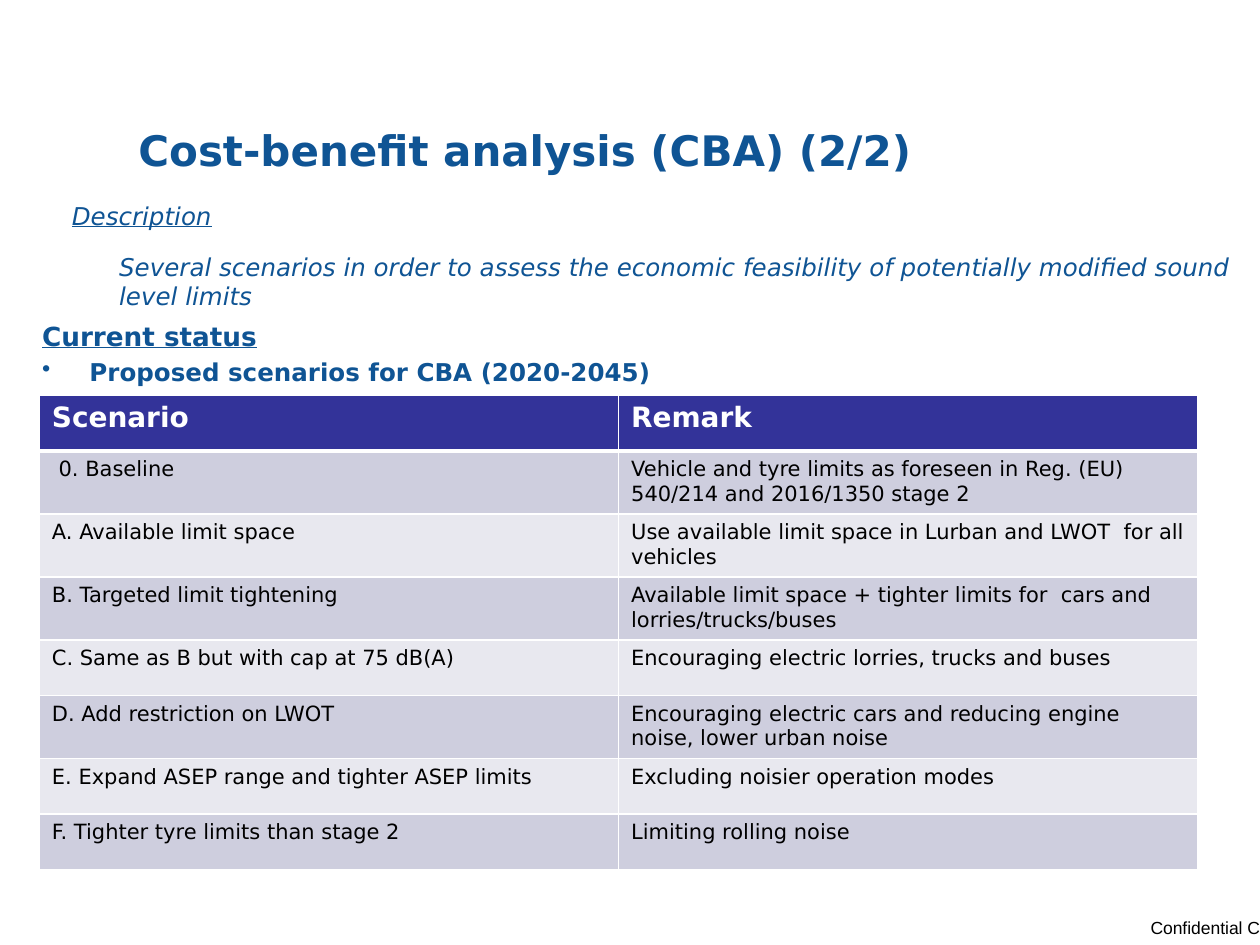
from lxml import etree
from pptx import Presentation
from pptx.dml.color import RGBColor
from pptx.enum.text import MSO_ANCHOR, MSO_AUTO_SIZE, PP_ALIGN
from pptx.oxml.ns import qn
from pptx.util import Pt

MIDDLE = MSO_ANCHOR.MIDDLE
FIT_SHAPE = MSO_AUTO_SIZE.SHAPE_TO_FIT_TEXT
RIGHT = PP_ALIGN.RIGHT

COLORS = {
    "blue": "0F5494",
    "header": "333399",
    "odd": "CECEDE",
    "even": "E8E8EF",
    "white": "FFFFFF",
    "black": "000000",
}
FONT = "DejaVu Sans"
INDENT = 27
SCENARIOS = [
    ("Scenario", "Remark"),
    (" 0. Baseline", "Vehicle and tyre limits as foreseen in Reg. (EU) 540/214 and 2016/1350 stage 2"),
    ("A. Available limit space", "Use available limit space in Lurban and LWOT  for all vehicles"),
    ("B. Targeted limit tightening", "Available limit space + tighter limits for  cars and lorries/trucks/buses"),
    ("C. Same as B but with cap at 75 dB(A)", "Encouraging electric lorries, trucks and buses"),
    ("D. Add restriction on LWOT", "Encouraging electric cars and reducing engine noise, lower urban noise"),
    ("E. Expand ASEP range and tighter ASEP limits", "Excluding noisier operation modes"),
    ("F. Tighter tyre limits than stage 2", "Limiting rolling noise"),
]


def rgb(name):
    """Return the named colour."""
    return RGBColor.from_string(COLORS[name])


def add_text_frame(slide, box):
    """Add a wrapping text box and return its text frame."""
    frame = slide.shapes.add_textbox(*map(Pt, box)).text_frame
    frame.word_wrap = True
    return frame


def write(paragraph, text, size, color="blue", name=FONT, before=0, after=0, **styles):
    """Fill a paragraph and set its font and spacing."""
    paragraph.text = text
    paragraph.space_before, paragraph.space_after = Pt(before), Pt(after)
    font = paragraph.font
    font.name, font.size = name, Pt(size)
    font.color.rgb = rgb(color)
    for style, value in styles.items():
        setattr(font, style, value)


def indent(paragraph, bullet=None):
    """Indent a paragraph, hanging a bullet in the margin if one is given."""
    properties = paragraph._p.get_or_add_pPr()
    properties.set("marL", str(Pt(INDENT)))
    if bullet:
        properties.set("indent", str(-Pt(INDENT)))
        mark = etree.Element(qn("a:buChar"), char=bullet)
        properties.insert_element_before(mark, "a:tabLst", "a:defRPr", "a:extLst")


def add_title(slide, box):
    """Add the slide title."""
    frame = add_text_frame(slide, box)
    frame.vertical_anchor = MIDDLE
    write(frame.paragraphs[0], "Cost-benefit analysis (CBA) (2/2)", 24, before=5, bold=True)


def add_description(slide, box):
    """Add the description heading and its text."""
    frame = add_text_frame(slide, box)
    write(frame.paragraphs[0], "Description", 14, before=6, after=6, italic=True, underline=True)
    detail = frame.add_paragraph()
    write(
        detail,
        "Several scenarios in order to assess the economic feasibility of "
        "potentially modified sound level limits",
        14, before=6, after=6, italic=True,
    )
    indent(detail)


def add_status(slide, box):
    """Add the status heading and its bullet."""
    frame = add_text_frame(slide, box)
    write(frame.paragraphs[0], "Current status", 15, before=5, bold=True, underline=True)
    item = frame.add_paragraph()
    write(item, "Proposed scenarios for CBA (2020-2045)", 14, before=3, bold=True)
    indent(item, "•")


def set_borders(cell, bottom_width):
    """Draw white borders round a table cell."""
    properties = cell._tc.get_or_add_tcPr()
    widths = {"a:lnL": 1, "a:lnR": 1, "a:lnT": 1, "a:lnB": bottom_width}
    for position, (tag, width) in enumerate(widths.items()):
        line = etree.Element(qn(tag), w=str(Pt(width)))
        fill = etree.SubElement(line, qn("a:solidFill"))
        etree.SubElement(fill, qn("a:srgbClr"), val=COLORS["white"])
        properties.insert(position, line)


def add_scenario_table(slide, box):
    """Add the table of scenarios and remarks."""
    table = slide.shapes.add_table(len(SCENARIOS), 2, *map(Pt, box)).table
    for row_index, texts in enumerate(SCENARIOS):
        is_header = row_index == 0
        band = "header" if is_header else "odd" if row_index % 2 else "even"
        for cell, text in zip(table.rows[row_index].cells, texts):
            cell.fill.solid()
            cell.fill.fore_color.rgb = rgb(band)
            set_borders(cell, 3 if is_header else 1)
            write(
                cell.text_frame.paragraphs[0], text, 16 if is_header else 12,
                "white" if is_header else "black", bold=is_header,
            )


def add_footer(slide, box):
    """Add the confidentiality mark."""
    frame = add_text_frame(slide, box)
    frame.word_wrap = False
    frame.auto_size = FIT_SHAPE
    frame.vertical_anchor = MIDDLE
    frame.margin_left = frame.margin_right = frame.margin_top = frame.margin_bottom = 0
    write(frame.paragraphs[0], "Confidential C", 10, "black", "Arial")
    frame.paragraphs[0].alignment = RIGHT


def main():
    """Build the slide and save it."""
    presentation = Presentation()
    presentation.slide_width, presentation.slide_height = Pt(720), Pt(540)
    slide = presentation.slides.add_slide(presentation.slide_layouts[6])
    add_footer(slide, (635, 520.5, 85, 19.5))
    add_title(slide, (72, 49, 648, 73.5))
    add_description(slide, (34, 111.5, 686, 68.5))
    add_status(slide, (17, 179.5, 686, 47))
    add_scenario_table(slide, (22.5, 226, 662, 253.5))
    presentation.save("out.pptx")


if __name__ == "__main__":
    main()
